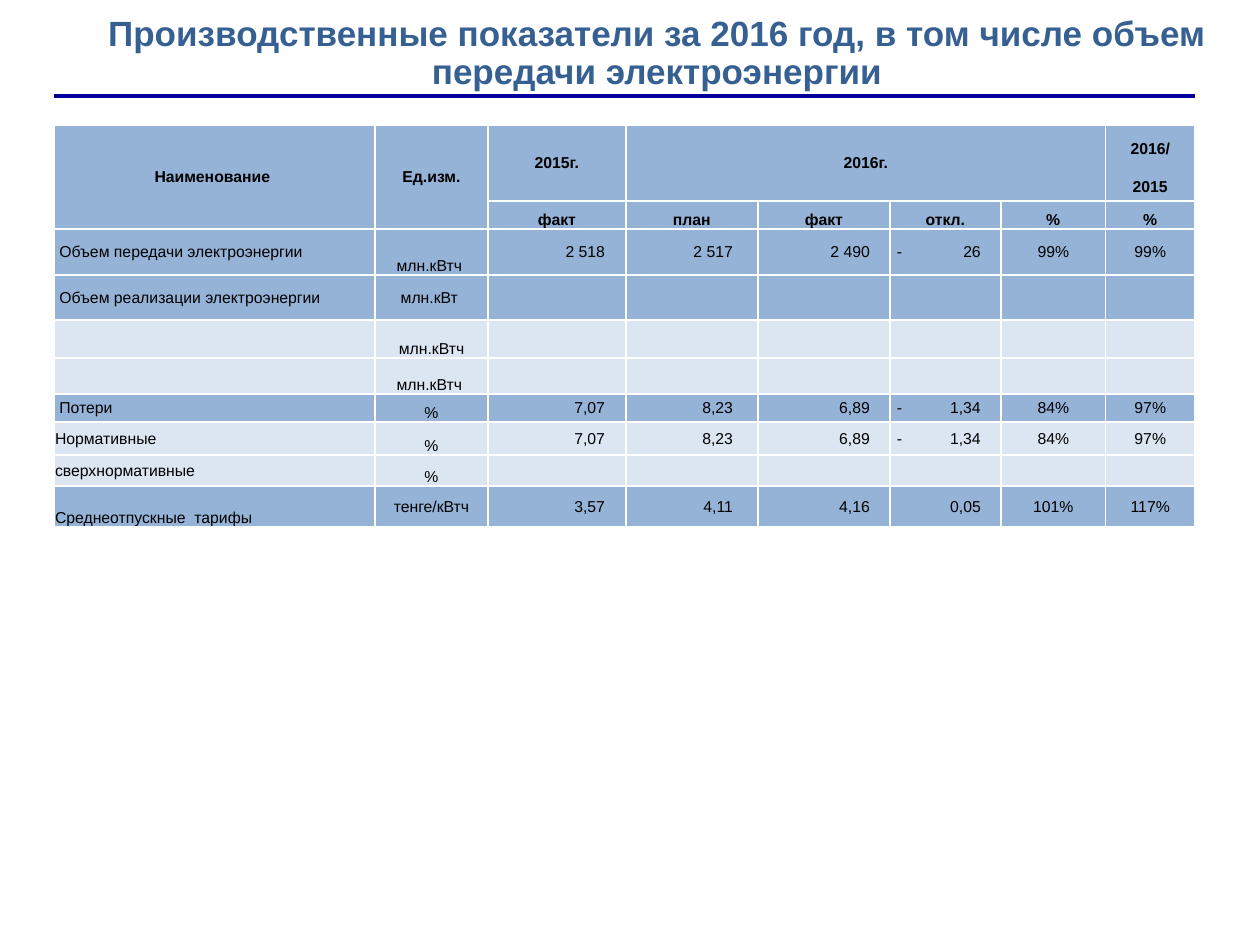
from typing import NamedTuple

from lxml import etree
from pptx import Presentation
from pptx.dml.color import RGBColor
from pptx.enum import shapes, text
from pptx.oxml.ns import qn
from pptx.util import Emu, Pt

PX = 914400 / 126
BLUE, PALE, WHITE = "95B3D7", "DCE6F2", "FFFFFF"
MID, LOW = text.MSO_ANCHOR.MIDDLE, text.MSO_ANCHOR.BOTTOM
LEFT, MIDDLE, RIGHT = text.PP_ALIGN.LEFT, text.PP_ALIGN.CENTER, text.PP_ALIGN.RIGHT

COLS = [321, 113, 138, 132, 132, 111, 105, 89]
ROWS = [48, 28, 28, 46, 45, 38, 36, 28, 33, 31, 41]
PADS = {2: 21, 3: 25, 4: 20, 5: 20}  # right margin of the number columns
DASH = 7  # left margin of the minus sign


class Head(NamedTuple):
    row: int
    col: int
    words: str
    tall: int = 1
    wide: int = 1
    anchor: text.MSO_ANCHOR = MID


class Line(NamedTuple):
    name: str
    unit: str
    nums: str = ""
    fill: str = PALE
    name_at: text.MSO_ANCHOR = MID
    unit_at: text.MSO_ANCHOR = LOW


HEADS = [
    Head(0, 0, "Наименование ", tall=3),
    Head(0, 1, "Ед.изм.", tall=3),
    Head(0, 2, "2015г.", tall=2),
    Head(0, 3, "2016г.", tall=2, wide=4),
    Head(0, 7, "2016/"),
    Head(1, 7, "2015"),
] + [Head(2, col, words, anchor=LOW) for col, words in
     enumerate(["факт", "план", "факт", "откл.", "%", "%"], 2)]

LINES = [
    Line(" Объем передачи электроэнергии", "млн.кВтч ",
         "2 518|2 517|2 490|-\t26|99%|99%", BLUE),
    Line(" Объем реализации электроэнергии", "млн.кВт ", fill=BLUE, unit_at=MID),
    Line("", "млн.кВтч"),
    Line("", "млн.кВтч "),
    Line(" Потери", "%", "7,07|8,23|6,89|-\t1,34|84%|97%", BLUE),
    Line("Нормативные", "%", "7,07|8,23|6,89|-\t1,34|84%|97%"),
    Line("сверхнормативные", "%"),
    Line("Среднеотпускные  тарифы", "тенге/кВтч",
         "3,57|4,11|4,16|0,05|101%|117%", BLUE, LOW, MID),
]


def px(n: int) -> Emu:
    return Emu(round(n * PX))


def rgb(code: str) -> RGBColor:
    return RGBColor.from_string(code)


def write(par, words: str, *, size=9, color="000000", bold=False, align=MIDDLE):
    """Fill a paragraph with one formatted run."""
    par.alignment = align
    if not words:
        etree.SubElement(par._p, qn("a:endParaRPr"), sz=str(size * 100))
        return
    run = par.add_run()
    run.text = words
    run.font.name, run.font.size, run.font.bold = "Arial", Pt(size), bold
    run.font.color.rgb = rgb(color)


def edge(cell, bare: str = ""):
    """Draw white cell borders, leaving out the bare side."""
    props = cell._tc.get_or_add_tcPr()
    for side in "LRTB":
        ln = etree.SubElement(props, qn(f"a:ln{side}"), w="12700")
        if side == bare:
            etree.SubElement(ln, qn("a:noFill"))
        else:
            paint = etree.SubElement(ln, qn("a:solidFill"))
            etree.SubElement(paint, qn("a:srgbClr"), val=WHITE)


def put(cell, words: str, anchor=MID, pad: int = 1, **style):
    """Write into a table cell; a tab sets the number apart from its sign."""
    par = cell.text_frame.paragraphs[0]
    cell.vertical_anchor = anchor
    cell.margin_right = px(pad)
    if "\t" in words:
        cell.margin_left, cell.margin_right = px(DASH), px(1)
        style["align"] = LEFT
        tabs = etree.SubElement(par._p.get_or_add_pPr(), qn("a:tabLst"))
        stop = COLS[5] - PADS[5] - DASH
        etree.SubElement(tabs, qn("a:tab"), pos=str(px(stop)), algn="r")
    write(par, words, **style)


def grid(slide):
    frame = slide.shapes.add_table(len(ROWS), len(COLS), px(54), px(125),
                                   px(sum(COLS)), px(sum(ROWS)))
    table = frame.table
    table.first_row = table.horz_banding = False
    for col, wide in zip(table.columns, COLS):
        col.width = px(wide)
    for row, tall in zip(table.rows, ROWS):
        row.height = px(tall)

    # Borders, fills and margins
    fills = [BLUE] * 3 + [line.fill for line in LINES]
    for r, fill in enumerate(fills):
        for c in range(len(COLS)):
            cell = table.cell(r, c)
            edge(cell, {(0, 7): "B", (1, 7): "T"}.get((r, c), ""))
            cell.fill.solid()
            cell.fill.fore_color.rgb = rgb(fill)
            cell.margin_left = cell.margin_right = cell.margin_top = px(1)
            cell.margin_bottom = 0

    # Header
    for head in HEADS:
        cell = table.cell(head.row, head.col)
        if head.tall * head.wide > 1:
            cell.merge(table.cell(head.row + head.tall - 1,
                                  head.col + head.wide - 1))
        put(cell, head.words, head.anchor, bold=True)

    # Body
    for r, line in enumerate(LINES, 3):
        put(table.cell(r, 0), line.name, line.name_at, align=LEFT)
        put(table.cell(r, 1), line.unit, line.unit_at)
        nums = line.nums.split("|") if line.nums else [""] * 6
        for c, num in enumerate(nums, 2):
            put(table.cell(r, c), num, pad=PADS.get(c, 1),
                align=RIGHT if c in PADS else MIDDLE)


def main():
    deck = Presentation()
    deck.slide_width, deck.slide_height = px(1260), px(945)
    slide = deck.slides.add_slide(deck.slide_layouts[6])

    # Title
    box = slide.shapes.add_textbox(px(44), px(10), px(1226), px(89)).text_frame
    box.word_wrap, box.vertical_anchor = True, MID
    par = box.paragraphs[0]
    par.line_spacing = 0.9
    write(par, "Производственные показатели за 2016 год, "
          "в том числе объем передачи электроэнергии",
          size=20, color="376092", bold=True)

    # Rule under the title
    rule = slide.shapes.add_connector(shapes.MSO_CONNECTOR.STRAIGHT,
                                      px(54), px(96), px(1195), px(96))
    rule.line.color.rgb, rule.line.width = rgb("000099"), Pt(1.75)
    etree.SubElement(rule._element.spPr, qn("a:effectLst"))

    grid(slide)
    deck.save("out.pptx")


if __name__ == "__main__":
    main()
